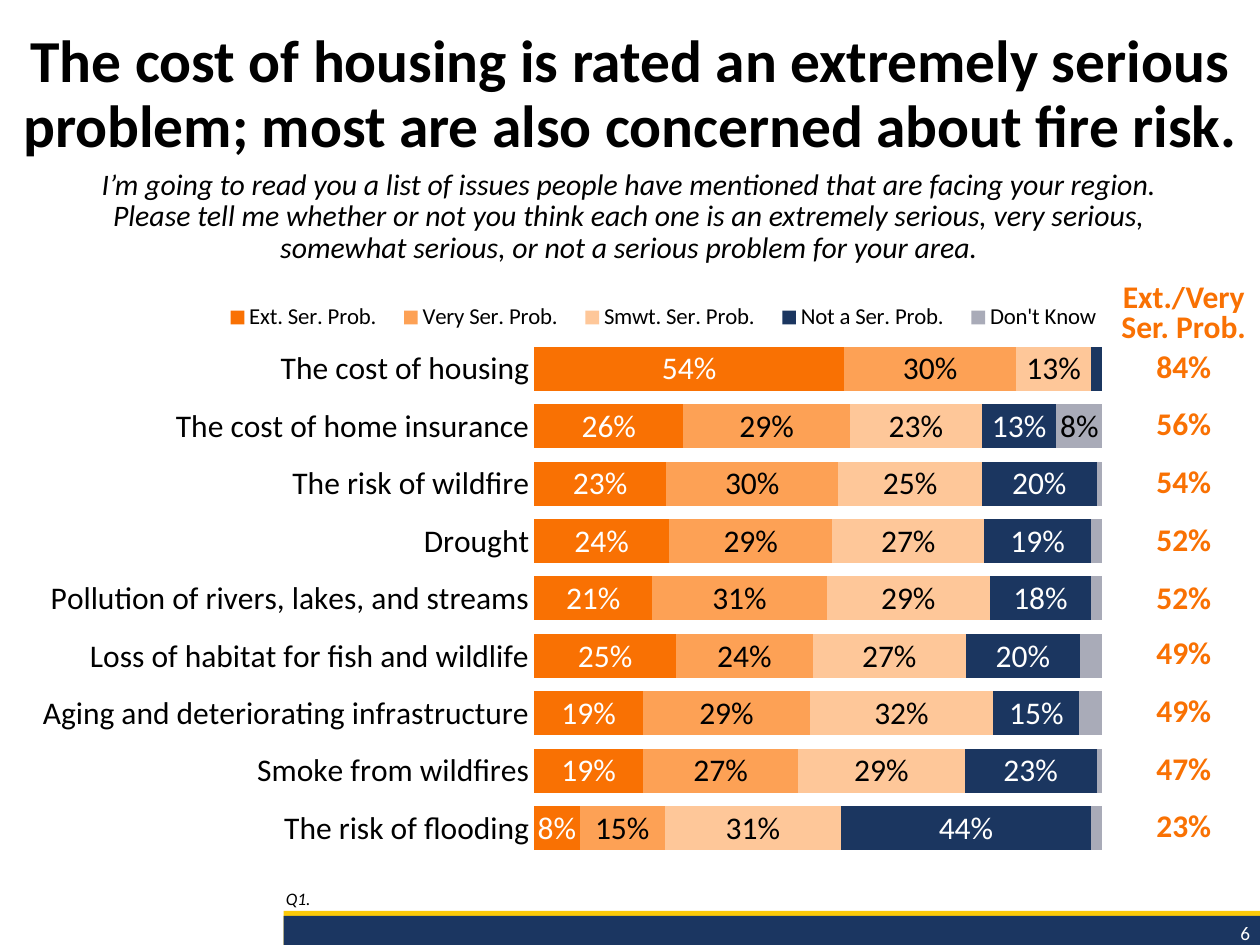
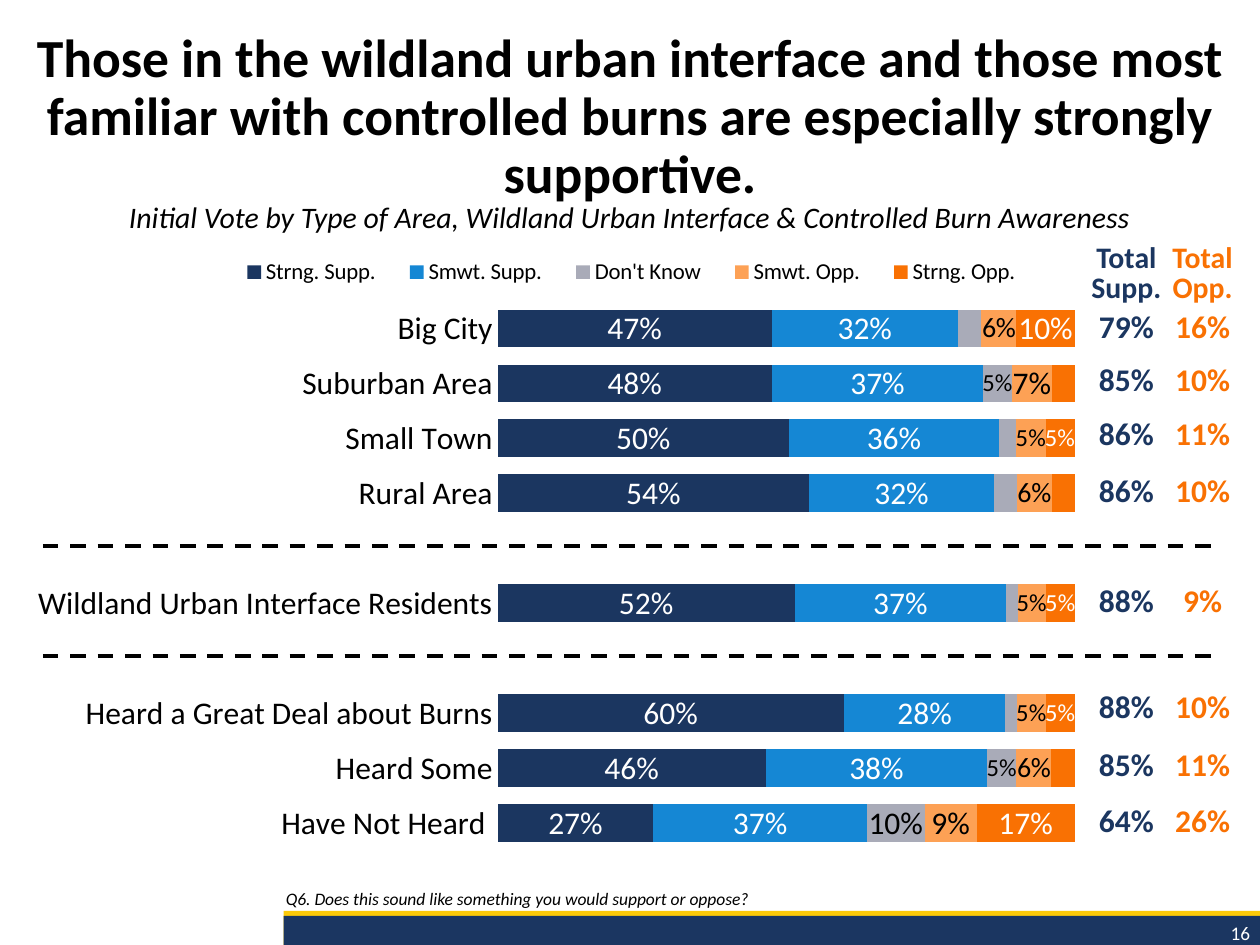
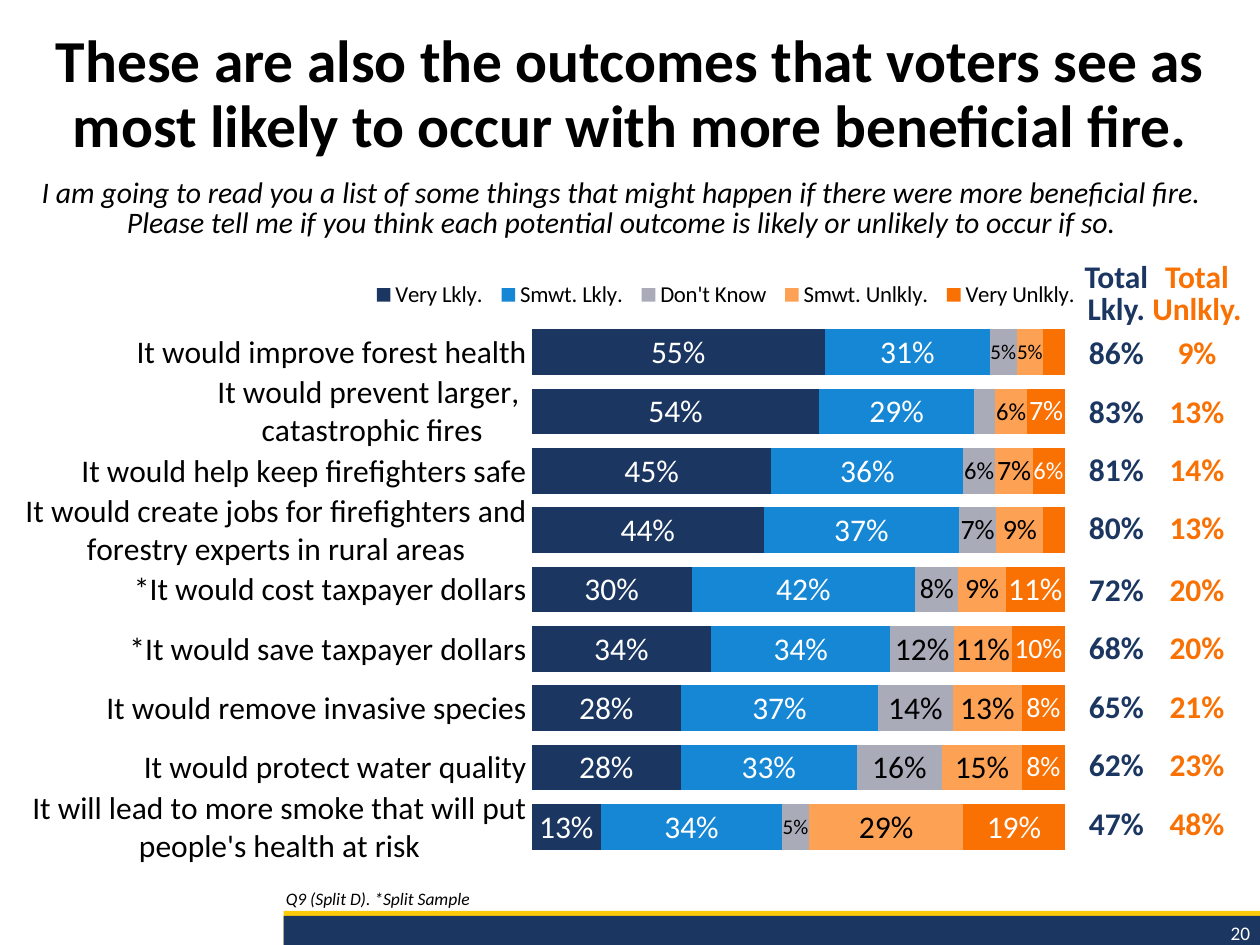
from pptx import Presentation
from pptx.chart.data import CategoryChartData
from pptx.dml.color import RGBColor
from pptx.enum.chart import XL_CHART_TYPE, XL_LEGEND_POSITION, XL_TICK_MARK
from pptx.enum.dml import MSO_LINE
from pptx.enum.shapes import MSO_CONNECTOR, MSO_SHAPE
from pptx.enum.text import MSO_ANCHOR, PP_ALIGN
from pptx.oxml import parse_xml
from pptx.oxml.ns import nsdecls, qn
from pptx.util import Emu, Pt

SCALE = 9144
FONT = "Calibri"
BLACK, WHITE = "000000", "FFFFFF"
NAVY, BLUE, GREY = "1B3660", "1587D4", "A9ABB8"
ORANGE, LIGHT_ORANGE, PALE_ORANGE = "F97103", "FDA155", "FEC799"
BAND_NAVY, BAND_GOLD = "1B3661", "FCCA09"
LABEL_COLOURS = {NAVY: WHITE, BLUE: WHITE, ORANGE: WHITE}
SMALLEST_LABEL = 5
SUPPORT_COLOURS = [NAVY, BLUE, GREY, LIGHT_ORANGE, ORANGE]


def px(*lengths):
    """Turn px lengths into EMU."""
    return [Emu(n * SCALE) for n in lengths]


def rgb(value):
    """Turn a hex string into a colour."""
    return RGBColor.from_string(value)


def set_all(obj, values):
    """Set every attribute in values on obj."""
    for name, value in values.items():
        setattr(obj, name, value)


def set_font(font, size, colour=BLACK, **values):
    """Give a font the deck's face, a size and a colour."""
    set_all(font, {"name": FONT, "size": Pt(size), **values})
    font.color.rgb = rgb(colour)


def write(tf, text, size, colour=BLACK, align=PP_ALIGN.CENTER, spacing=None,
          anchor=MSO_ANCHOR.TOP, **font):
    """Write one paragraph into a text frame."""
    set_all(tf, {"word_wrap": True, "vertical_anchor": anchor})
    p = tf.paragraphs[0]
    p.text = text
    set_all(p, {"alignment": align, "line_spacing": spacing})
    for r in p.runs:
        set_font(r.font, size, colour, **font)


def add_text(s, box, text, size, **values):
    """Add a text box."""
    write(s.shapes.add_textbox(*px(*box)).text_frame, text, size, **values)


def add_footer(s, box, note, number):
    """Draw the bottom bands, the question note and the page number."""
    x, y, w, h = box
    for top, colour in ((0, BAND_GOLD), (4, BAND_NAVY)):
        sp = s.shapes.add_shape(MSO_SHAPE.RECTANGLE, *px(x, y + top, w, h - top))
        sp.shadow.inherit = False
        sp.fill.solid()
        sp.fill.fore_color.rgb = rgb(colour)
        sp.line.fill.background()
    add_text(s, (x + w - 146, y + 3, 148, 29), str(number), 11,
             colour=WHITE, align=PP_ALIGN.RIGHT)
    add_text(s, (x - 8, y - 50, w + 8, 54), note, 10, align=PP_ALIGN.LEFT,
             spacing=0.9, anchor=MSO_ANCHOR.BOTTOM, italic=True)


def layout_xml(box, frame, target=""):
    """Build a manual chart layout for a box inside the chart frame."""
    parts = "".join(
        f'<c:{tag} val="{length / frame[2 + i % 2]:.4f}"/>'
        for i, (tag, length) in enumerate(zip("xywh", box)))
    return parse_xml(
        f'<c:layout {nsdecls("c")}><c:manualLayout>{target}'
        '<c:xMode val="edge"/><c:yMode val="edge"/>'
        f'{parts}</c:manualLayout></c:layout>')


def label_series(series, colour, values, small_sizes):
    """Label the bars, leaving out slivers and shrinking tight labels."""
    text_colour = LABEL_COLOURS.get(colour, BLACK)
    labels = series.data_labels
    set_all(labels, {"show_value": True, "number_format": "0%",
                     "number_format_is_linked": False})
    set_font(labels.font, 18, text_colour)
    hidden = [i for i, v in enumerate(values)
              if v is not None and v < SMALLEST_LABEL]
    for place, i in enumerate(hidden):
        labels._element.insert(place, parse_xml(
            f'<c:dLbl {nsdecls("c")}><c:idx val="{i}"/>'
            '<c:delete val="1"/></c:dLbl>'))
    for i, v in enumerate(values):
        if v in small_sizes:
            set_font(series.points[i].data_label.font, small_sizes[v], text_colour)


def add_bars(s, box, plot, legend, gap, categories, names, colours, rows,
             small_sizes):
    """Add a stacked bar chart; each row holds one category's percentages."""
    columns = list(zip(*rows))
    data = CategoryChartData(number_format="0%")
    data.categories = categories
    for name, values in zip(names, columns):
        data.add_series(name, [None if v is None else v / 100 for v in values])
    chart = s.shapes.add_chart(
        XL_CHART_TYPE.BAR_STACKED_100, *px(*box), data).chart
    set_font(chart.font, 18)
    set_all(chart, {"has_title": False, "has_legend": True})

    set_all(chart.legend, {"position": XL_LEGEND_POSITION.TOP,
                           "include_in_layout": False})
    set_font(chart.legend.font, 13)
    chart.legend._element.insert(1, layout_xml(legend, box))

    area = chart._chartSpace.xpath(".//c:plotArea")[0]
    for old in area.findall(qn("c:layout")):
        area.remove(old)
    area.insert(0, layout_xml(plot, box, '<c:layoutTarget val="inner"/>'))

    axis = chart.category_axis
    set_all(axis, {"reverse_order": True, "has_major_gridlines": False,
                   "major_tick_mark": XL_TICK_MARK.NONE,
                   "minor_tick_mark": XL_TICK_MARK.NONE})
    axis.format.line.fill.background()
    set_font(axis.tick_labels.font, 18)
    set_all(chart.value_axis, {"visible": False, "major_unit": 0.2,
                               "has_major_gridlines": False})

    bars = chart.plots[0]
    set_all(bars, {"gap_width": gap, "overlap": 100, "vary_by_categories": False})
    for series, colour, values in zip(bars.series, colours, columns):
        series.format.fill.solid()
        series.format.fill.fore_color.rgb = rgb(colour)
        label_series(series, colour, values, small_sizes)


def add_totals(s, at, widths, heights, colours, heads, rows, head_size, spacing):
    """Add the table of totals beside the bars."""
    box = (*at, sum(widths), sum(heights))
    table = s.shapes.add_table(len(heights), len(widths), *px(*box)).table
    set_all(table, {"first_row": False, "horz_banding": False})
    for column, width in zip(table.columns, px(*widths)):
        column.width = width
    for row, height in zip(table.rows, px(*heights)):
        row.height = height
    side, none = px(1, 0)
    for i, values in enumerate([heads, *rows]):
        for j, colour in enumerate(colours):
            cell = table.cell(i, j)
            cell.fill.background()
            set_all(cell, {"margin_left": side, "margin_right": side,
                           "margin_top": side, "margin_bottom": none,
                           "vertical_anchor": MSO_ANCHOR.BOTTOM})
            if values is None:
                continue
            p = cell.text_frame.paragraphs[0]
            p.alignment = PP_ALIGN.CENTER
            if i == 0:
                p.line_spacing = Pt(spacing)
            r = p.add_run()
            r.text = values[j] if i == 0 else f"{values[j]}%"
            set_font(r.font, 18 if i else head_size, colour, bold=True)


def add_divider(s, x, y, w):
    """Draw a dashed line between groups of bars."""
    line = s.shapes.add_connector(MSO_CONNECTOR.STRAIGHT, *px(x, y, x + w, y))
    set_all(line.line, {"width": Pt(2.25), "dash_style": MSO_LINE.DASH})
    line.line.color.rgb = rgb(BLACK)
    line._element.spPr.append(parse_xml(f'<a:effectLst {nsdecls("a")}/>'))


def add_survey_slide(prs, title, title_size, question, note, number, bars,
                     totals, dividers=()):
    """Add a slide with a title, a question, bars and totals."""
    s = prs.slides.add_slide(prs.slide_layouts[6])
    add_footer(s, (225, 723, 775, 27), note, number)
    add_bars(s, **bars)
    add_totals(s, **totals)
    add_text(s, (0, 20, 1000, 122), title, title_size, spacing=0.9, bold=True)
    box, text, spacing, anchor = question
    add_text(s, box, text, 17, spacing=Pt(spacing), anchor=anchor, italic=True)
    for y in dividers:
        add_divider(s, 34, y, 932)


def add_problems(prs):
    """Add the slide on how serious each problem is."""
    bars = {
        "box": (20, 220, 866, 474), "plot": (404, 50, 451, 410),
        "legend": (147, 18, 719, 28), "gap": 30, "small_sizes": {},
        "names": ["Ext. Ser. Prob.", "Very Ser. Prob.", "Smwt. Ser. Prob.",
                  "Not a Ser. Prob.", "Don't Know"],
        "colours": [ORANGE, LIGHT_ORANGE, PALE_ORANGE, NAVY, GREY],
        "categories": [
            "The cost of housing", "The cost of home insurance",
            "The risk of wildfire", "Drought",
            "Pollution of rivers, lakes, and streams",
            "Loss of habitat for fish and wildlife",
            "Aging and deteriorating infrastructure",
            "Smoke from wildfires", "The risk of flooding"],
        "rows": [(54, 30, 13, 2, 0), (26, 29, 23, 13, 8), (23, 30, 25, 20, 1),
                 (24, 29, 27, 19, 2), (21, 31, 29, 18, 2), (25, 24, 27, 20, 4),
                 (19, 29, 32, 15, 4), (19, 27, 29, 23, 1), (8, 15, 31, 44, 2)],
    }
    totals = {
        "at": (882, 227), "widths": [115], "colours": [ORANGE],
        "heights": [48, 31, 46, 46, 46, 46, 44, 46, 46, 45],
        "heads": ["Ext./Very Ser. Prob."], "head_size": 18, "spacing": 17,
        "rows": [(n,) for n in (84, 56, 54, 52, 52, 49, 49, 47, 23)],
    }
    question = (
        (47, 130, 905, 86),
        "I’m going to read you a list of issues people have mentioned that are "
        "facing your region. Please tell me whether or not you think each one is "
        "an extremely serious, very serious, somewhat serious, or not a serious "
        "problem for your area.", 18, MSO_ANCHOR.TOP)
    add_survey_slide(
        prs, "The cost of housing is rated an extremely serious problem; "
        "most are also concerned about fire risk.", 34, question, "Q1.", 6,
        bars, totals)


def add_support(prs):
    """Add the slide on support by area and awareness."""
    blank = (None,) * 5
    bars = {
        "box": (10, 179, 848, 513), "plot": (385, 60, 458, 436),
        "legend": (165, 23, 652, 28), "gap": 45, "small_sizes": {5: 14, 6: 16},
        "names": ["Strng. Supp.", "Smwt. Supp.", "Don't Know", "Smwt. Opp.",
                  "Strng. Opp."],
        "colours": SUPPORT_COLOURS,
        "categories": [
            "Big City", "Suburban Area", "Small Town", "Rural Area", "",
            "Wildland Urban Interface Residents", "",
            "Heard a Great Deal about Burns", "Heard Some", "Have Not Heard "],
        "rows": [(47, 32, 4, 6, 10), (48, 37, 5, 7, 4), (50, 36, 3, 5, 5),
                 (54, 32, 4, 6, 4), blank, (52, 37, 2, 5, 5), blank,
                 (60, 28, 2, 5, 5), (46, 38, 5, 6, 4), (27, 37, 10, 9, 17)],
    }
    totals = {
        "at": (861, 195), "widths": [66, 55], "colours": [NAVY, ORANGE],
        "heights": [48, 32, 42, 43, 45, 41, 47, 41, 43, 46, 44],
        "heads": ["Total Supp.", "Total Opp."], "head_size": 17, "spacing": 17,
        "rows": [(79, 16), (85, 10), (86, 11), (86, 10), None, (88, 9), None,
                 (88, 10), (85, 11), (64, 26)],
    }
    question = (
        (0, 157, 1000, 34),
        "Initial Vote by Type of Area, Wildland Urban Interface & Controlled "
        "Burn Awareness", 17, MSO_ANCHOR.MIDDLE)
    add_survey_slide(
        prs, "Those in the wildland urban interface and those most familiar "
        "with controlled burns are especially strongly supportive.", 30.6,
        question, "Q6. Does this sound like something you would support or oppose?",
        16, bars, totals, dividers=(433, 521))


def add_outcomes(prs):
    """Add the slide on how likely each outcome is."""
    bars = {
        "box": (0, 210, 862, 486), "plot": (422, 46, 423, 424),
        "legend": (290, 10, 572, 28), "gap": 30,
        "small_sizes": {5: 12, 6: 14, 7: 16, 8: 16, 9: 16, 10: 16},
        "names": ["Very Lkly.", "Smwt. Lkly.", "Don't Know", "Smwt. Unlkly.",
                  "Very Unlkly."],
        "colours": SUPPORT_COLOURS,
        "categories": [
            "It would improve forest health",
            "It would prevent larger, \ncatastrophic fires",
            "It would help keep firefighters safe",
            "It would create jobs for firefighters and forestry experts in "
            "rural areas",
            "*It would cost taxpayer dollars", "*It would save taxpayer dollars",
            "It would remove invasive species",
            "It would protect water quality",
            "It will lead to more smoke that will put people's health at risk"],
        "rows": [(55, 31, 5, 5, 4), (54, 29, 4, 6, 7), (45, 36, 6, 7, 6),
                 (44, 37, 7, 9, 4), (30, 42, 8, 9, 11), (34, 34, 12, 11, 10),
                 (28, 37, 14, 13, 8), (28, 33, 16, 15, 8), (13, 34, 5, 29, 19)],
    }
    totals = {
        "at": (859, 210), "widths": [54, 74], "colours": [NAVY, ORANGE],
        "heights": [51, 35, 47, 46, 46, 49, 46, 47, 46, 47],
        "heads": ["Total Lkly.", "Total Unlkly."], "head_size": 18, "spacing": 18,
        "rows": [(86, 9), (83, 13), (81, 14), (80, 13), (72, 20), (68, 20),
                 (65, 21), (62, 23), (47, 48)],
    }
    question = (
        (14, 137, 959, 58),
        "I am going to read you a list of some things that might happen if there "
        "were more beneficial fire.\nPlease tell me if you think each potential "
        "outcome is likely or unlikely to occur if so.", 17, MSO_ANCHOR.MIDDLE)
    add_survey_slide(
        prs, "These are also the outcomes that voters see as most likely to "
        "occur with more beneficial fire.", 34, question,
        "Q9 (Split D). *Split Sample", 20, bars, totals)


def main():
    """Build the deck."""
    prs = Presentation()
    prs.slide_width, prs.slide_height = px(1000, 750)
    add_problems(prs)
    add_support(prs)
    add_outcomes(prs)
    prs.save("out.pptx")


if __name__ == "__main__":
    main()
